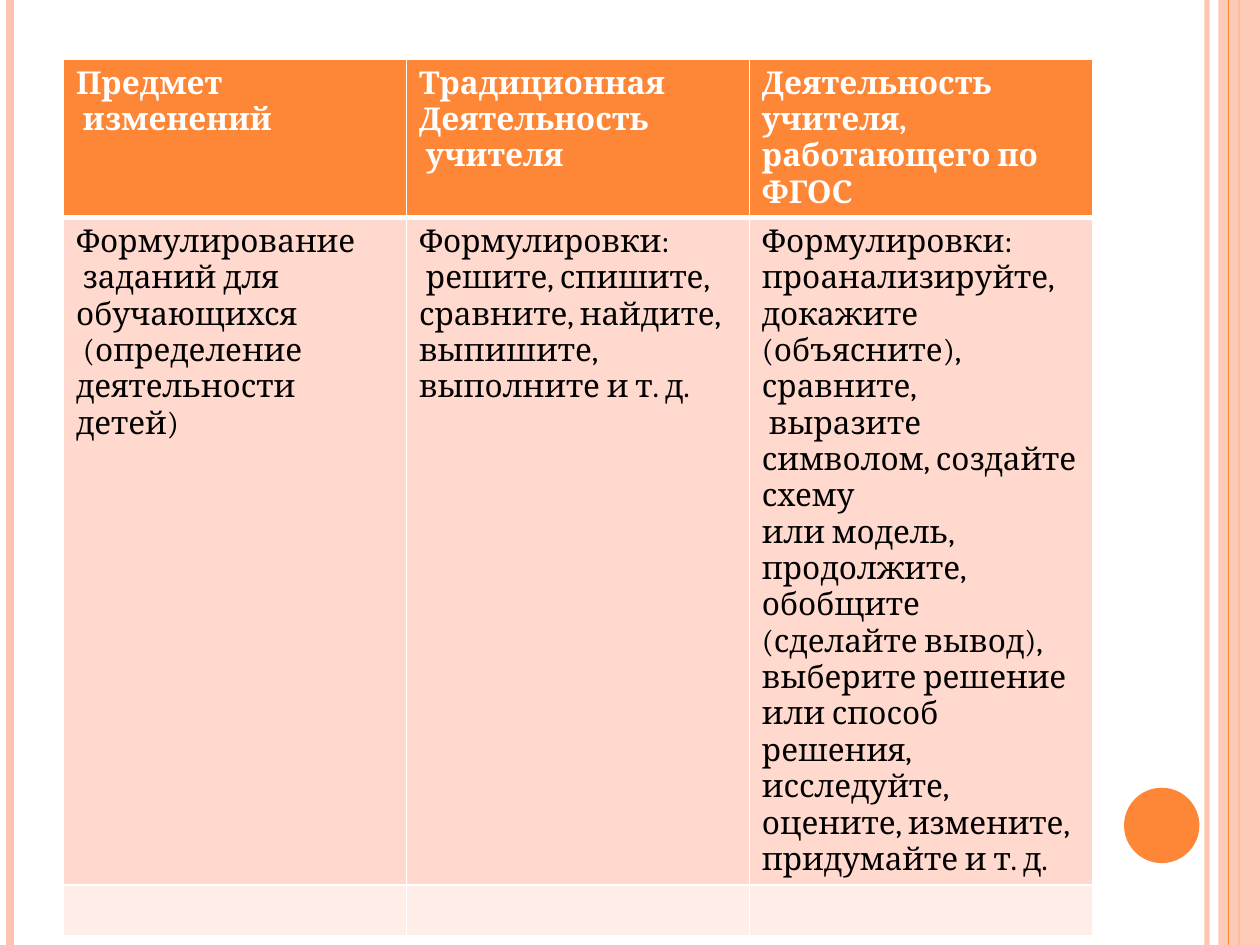
import pptx
import pptx.dml.color
import pptx.enum.shapes
import pptx.oxml
import pptx.oxml.ns
import pptx.util
from lxml import etree

Cm = pptx.util.Cm
Pt = pptx.util.Pt
qn = pptx.oxml.ns.qn

WIDE, HIGH = 25.4, 19.05
ORANGE, PEACH, WHITE, BLACK = "FE8637", "FEC3AE", "FFFFFF", "000000"
FILLS = [ORANGE, "FFD9CE", "FFEDE8"]
ROWS = [
    [
        "Предмет\n изменений",
        "Традиционная\nДеятельность\n учителя",
        "Деятельность учителя,\nработающего по ФГОС",
    ],
    [
        "Формулирование\n заданий для\nобучающихся\n (определение\n"
        "деятельности\nдетей)",
        "Формулировки:\n решите, спишите,\nсравните, найдите,\nвыпишите,\n"
        "выполните и т. д.",
        "Формулировки: проанализируйте,\nдокажите (объясните), сравните,\n"
        " выразите символом, создайте схему\nили модель,\n"
        "продолжите, обобщите (сделайте вывод), выберите решение или способ "
        "решения, исследуйте, оцените, измените,\nпридумайте и т. д.",
    ],
    ["", "", ""],
]


def paint(color, tone):
    color.rgb = pptx.dml.color.RGBColor.from_string(tone)


def fade(part, share):
    """Make the solid colour inside an XML part partly transparent."""
    tone = next(part.iter(qn("a:srgbClr")))
    etree.SubElement(tone, qn("a:alpha"), val=str(share * 1000))


def add_rule(shapes, x, top, high, tone, width, share=100):
    rule = shapes.add_connector(
        pptx.enum.shapes.MSO_CONNECTOR.STRAIGHT,
        Cm(x), Cm(top), Cm(x), Cm(top + high))
    paint(rule.line.color, tone)
    rule.line.width = Pt(width)
    props = rule.element.spPr
    if share < 100:
        fade(props, share)
    etree.SubElement(props, qn("a:effectLst"))


def add_plain(shapes, kind, left, top, wide, high, tone):
    shape = shapes.add_shape(kind, Cm(left), Cm(top), Cm(wide), Cm(high))
    shape.shadow.inherit = False
    shape.fill.solid()
    paint(shape.fill.fore_color, tone)
    shape.line.fill.background()
    return shape


def add_frame(shapes, left, top, wide, high):
    """Place the stripes and the disc along the slide's sides."""
    kinds = pptx.enum.shapes.MSO_SHAPE
    right = left + wide
    add_rule(shapes, right - 1.07, top, high, PEACH, 3, 93)
    add_rule(shapes, left + 0.21, top, high, PEACH, 4.5)
    add_rule(shapes, right - 0.42, top, high, ORANGE, 1.5)
    band = add_plain(shapes, kinds.RECTANGLE,
                     right - 0.84, top, 0.84, high, PEACH)
    fade(band.element.spPr, 87)
    add_rule(shapes, right - 0.64, top, high, ORANGE, 0.75)
    add_plain(shapes, kinds.OVAL,
              right - 2.74, top + 15.88, 1.52, 1.52, ORANGE)


def add_edges(cell, widths):
    props = cell._tc.get_or_add_tcPr()
    for side, width in widths.items():
        edge = etree.SubElement(props, qn("a:ln" + side), w=str(Pt(width)))
        fill = etree.SubElement(edge, qn("a:solidFill"))
        etree.SubElement(fill, qn("a:srgbClr"), val=WHITE)


def fill_cell(cell, text, row):
    head = row == 0
    add_edges(cell, {"L": 1, "R": 1, "T": 3 if row == 1 else 1,
                     "B": 3 if head else 1})
    cell.fill.solid()
    paint(cell.fill.fore_color, FILLS[row])
    cell.text_frame.text = text
    for para in cell.text_frame.paragraphs:
        para.font.size = Pt(18)
        for run in para.runs:
            run.font.size = Pt(18)
            run.font.name = "Cambria"
            run.font.bold = head
            paint(run.font.color, WHITE if head else BLACK)


def add_grid(shapes, left, top, wide, high):
    frame = shapes.add_table(len(ROWS), len(ROWS[0]),
                             Cm(left), Cm(top), Cm(wide), Cm(high))
    table = frame.table
    for row, texts in enumerate(ROWS):
        table.rows[row].height = Cm(1.03)
        for col, text in enumerate(texts):
            fill_cell(table.cell(row, col), text, row)
    frame.height = Cm(high)


def main():
    deck = pptx.Presentation()
    deck.slide_width, deck.slide_height = Cm(WIDE), Cm(HIGH)
    slide = deck.slides.add_slide(deck.slide_layouts[6])
    add_frame(slide.shapes, 0, 0, WIDE, HIGH)
    add_grid(slide.shapes, 1.28, 1.2, 20.74, 16.79)
    deck.save("out.pptx")


if __name__ == "__main__":
    main()
